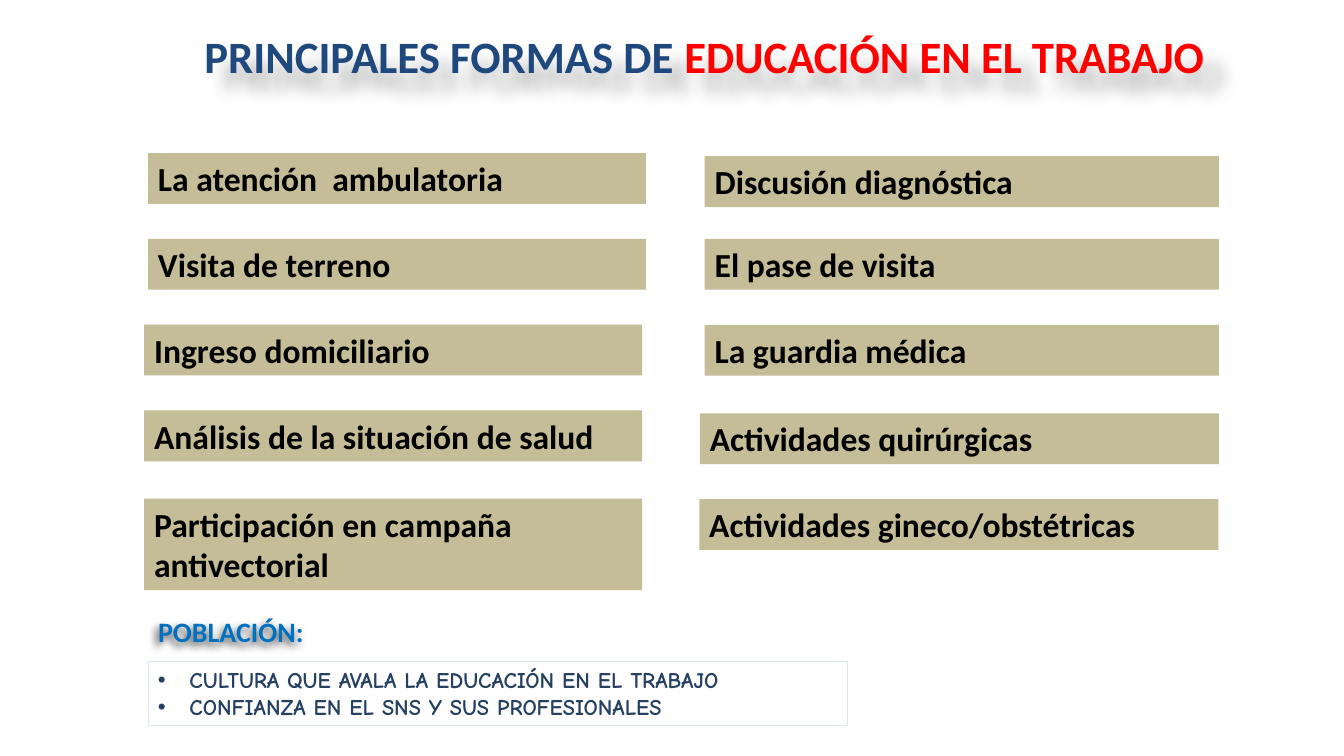
from dataclasses import dataclass

import lxml.etree
import pptx
import pptx.dml.color
import pptx.enum.shapes
import pptx.enum.text
import pptx.oxml.ns
import pptx.util

Pt = pptx.util.Pt
qn = pptx.oxml.ns.qn
Align = pptx.enum.text.PP_ALIGN
AutoSize = pptx.enum.text.MSO_AUTO_SIZE
BOX_HEIGHT = 36.3


@dataclass(frozen=True)
class Box:
    left: float
    top: float
    width: float
    height: float


@dataclass(frozen=True)
class Activity:
    text: str
    box: Box


@dataclass(frozen=True)
class TextStyle:
    size: float
    color: str
    font: str = "Calibri"


@dataclass(frozen=True)
class Shadow:
    blur: float
    distance: float
    degrees: int
    opacity: int


ACTIVITIES = [
    # Left column
    Activity("La atención  ambulatoria", Box(105.8, 109.4, 355.7, BOX_HEIGHT)),
    Activity("Visita de terreno", Box(105.8, 170.6, 355.7, BOX_HEIGHT)),
    Activity("Ingreso domiciliario", Box(103, 231.8, 355.7, BOX_HEIGHT)),
    Activity("Análisis de la situación de salud", Box(103, 293.2, 355.7, BOX_HEIGHT)),
    Activity("Participación en campaña antivectorial", Box(103, 356.2, 355.7, 65.4)),
    # Right column
    Activity("Discusión diagnóstica", Box(503.4, 111.6, 367.2, BOX_HEIGHT)),
    Activity("El pase de visita", Box(503.4, 170.6, 367.2, BOX_HEIGHT)),
    Activity("La guardia médica", Box(503.4, 232, 367.2, BOX_HEIGHT)),
    Activity("Actividades quirúrgicas", Box(499.9, 295.2, 370.7, BOX_HEIGHT)),
    Activity("Actividades gineco/obstétricas", Box(499.5, 356.5, 370.8, BOX_HEIGHT)),
]
POPULATION_POINTS = [
    "CULTURA QUE AVALA LA EDUCACIÓN EN EL TRABAJO",
    "CONFIANZA EN EL SNS Y SUS PROFESIONALES",
]


def color(value: str) -> pptx.dml.color.RGBColor:
    return pptx.dml.color.RGBColor.from_string(value)


def add_run(paragraph, text: str, style: TextStyle) -> None:
    run = paragraph.add_run()
    run.text = text
    formats = {"size": Pt(style.size), "name": style.font, "bold": True}
    for name, value in formats.items():
        setattr(run.font, name, value)
    run.font.color.rgb = color(style.color)


def prepare_text(shape, auto_size=AutoSize.SHAPE_TO_FIT_TEXT):
    formats = {
        "word_wrap": True,
        "auto_size": auto_size,
        "vertical_anchor": pptx.enum.text.MSO_ANCHOR.TOP,
    }
    for name, value in formats.items():
        setattr(shape.text_frame, name, value)
    shape.text_frame.paragraphs[0].alignment = Align.LEFT
    return shape


def add_rectangle(slide, box: Box, fill: str = "", line: str = ""):
    shape = slide.shapes.add_shape(
        pptx.enum.shapes.MSO_SHAPE.RECTANGLE,
        Pt(box.left), Pt(box.top), Pt(box.width), Pt(box.height),
    )
    shape.shadow.inherit = False
    if fill:
        shape.fill.solid()
        shape.fill.fore_color.rgb = color(fill)
    else:
        shape.fill.background()
    if line:
        shape.line.color.rgb = color(line)
        shape.line.width = Pt(0.75)
    else:
        shape.line.fill.background()
    return prepare_text(shape)


def add_text(slide, box: Box, auto_size=AutoSize.SHAPE_TO_FIT_TEXT):
    shape = slide.shapes.add_textbox(
        Pt(box.left), Pt(box.top), Pt(box.width), Pt(box.height)
    )
    return prepare_text(shape, auto_size)


def add_shadow(shape, shadow: Shadow) -> None:
    properties = shape.element.spPr
    effects = lxml.etree.SubElement(properties, qn("a:effectLst"))
    outer = lxml.etree.SubElement(
        effects, qn("a:outerShdw"),
        blurRad=str(Pt(shadow.blur)), dist=str(Pt(shadow.distance)),
        dir=str(shadow.degrees * 60000), algn="tl", rotWithShape="0",
    )
    black = lxml.etree.SubElement(outer, qn("a:srgbClr"), val="000000")
    lxml.etree.SubElement(black, qn("a:alpha"), val=str(shadow.opacity * 1000))


def add_bullet(paragraph, indent: float) -> None:
    properties = paragraph._p.get_or_add_pPr()
    properties.set("marL", str(Pt(indent)))
    properties.set("indent", str(-Pt(indent)))
    lxml.etree.SubElement(properties, qn("a:buFont"), typeface="Arial")
    lxml.etree.SubElement(properties, qn("a:buChar"), char="•")


def main() -> None:
    presentation = pptx.Presentation()
    presentation.slide_width = Pt(960)
    presentation.slide_height = Pt(540)
    slide = presentation.slides.add_slide(presentation.slide_layouts[6])

    # Title
    title = add_text(slide, Box(126.7, 16.6, 753.1, 46.8), AutoSize.NONE)
    paragraph = title.text_frame.paragraphs[0]
    paragraph.alignment = Align.CENTER
    add_run(paragraph, "PRINCIPALES FORMAS DE ", TextStyle(32, "1F497D"))
    add_run(paragraph, "EDUCACIÓN EN EL TRABAJO", TextStyle(32, "FF0000"))
    add_shadow(title, Shadow(blur=12, distance=18, degrees=45, opacity=30))

    # Forms of education
    for activity in ACTIVITIES:
        shape = add_rectangle(slide, activity.box, fill="C4BD97")
        add_run(shape.text_frame.paragraphs[0], activity.text, TextStyle(24, "000000"))

    # Population
    heading = add_text(slide, Box(105.8, 435.6, 147.6, 31.5))
    add_run(heading.text_frame.paragraphs[0], "POBLACIÓN:", TextStyle(20, "0070C0"))
    add_shadow(heading, Shadow(blur=6, distance=3, degrees=135, opacity=70))

    panel = add_rectangle(slide, Box(105.8, 472.3, 499.7, 46.1), line="DCE6F2")
    frame = panel.text_frame
    for index, point in enumerate(POPULATION_POINTS):
        paragraph = frame.add_paragraph() if index else frame.paragraphs[0]
        paragraph.alignment = Align.LEFT
        add_bullet(paragraph, indent=22.5)
        add_run(paragraph, point, TextStyle(16, "254061", "Comic Neue"))

    presentation.save("out.pptx")


if __name__ == "__main__":
    main()
